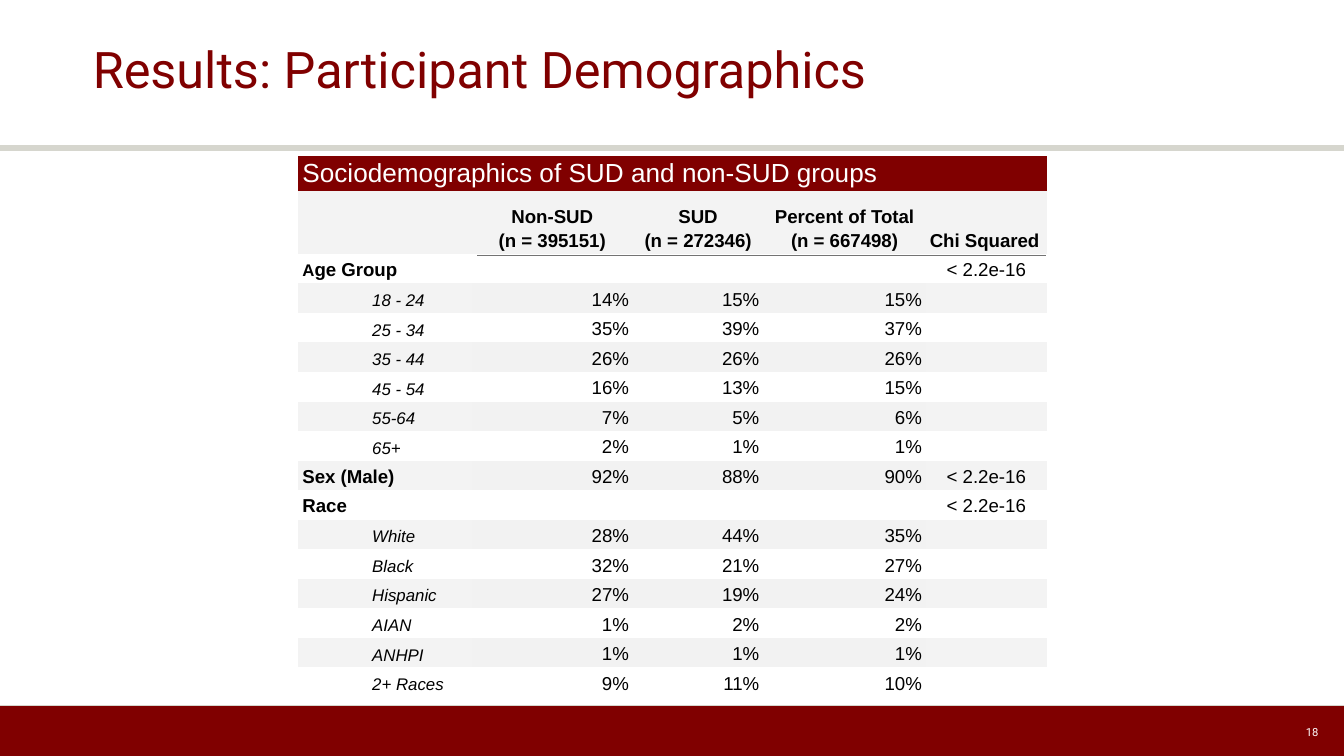
from lxml import etree
from pptx import Presentation
from pptx.dml.color import RGBColor
from pptx.enum.shapes import MSO_CONNECTOR, MSO_SHAPE
from pptx.enum.text import MSO_ANCHOR, PP_ALIGN
from pptx.oxml.ns import qn
from pptx.util import Inches, Pt

LEFT, CENTER, RIGHT = PP_ALIGN.LEFT, PP_ALIGN.CENTER, PP_ALIGN.RIGHT
MIDDLE, BOTTOM = MSO_ANCHOR.MIDDLE, MSO_ANCHOR.BOTTOM
RECTANGLE, STRAIGHT = MSO_SHAPE.RECTANGLE, MSO_CONNECTOR.STRAIGHT

MAROON, STONE, GRAY = "800000", "D6D6CE", "737373"
WHITE, BLACK, BAND, VALUE_BAND = "FFFFFF", "000000", "F3F3F3", "F2F2F2"
NO_STYLE = "{2D5ABB26-0587-4C30-8999-92F81FD0307C}"

COLUMN_WIDTHS = [0.52, 0.67, 0.09, 1.2, 0.97, 1.21, 0.9]
TITLE_HEIGHT, HEADER_HEIGHT, ROW_HEIGHT = 0.26, 0.47, 0.22
VALUE_COLUMNS, CHI_COLUMN = range(3, 6), 6
CHI = "< 2.2e-16"

HEADERS = ["Non-SUD\n(n = 395151)", "SUD\n(n = 272346)", "Percent of Total\n(n = 667498)", "Chi Squared"]
GROUPS = [
    ("Age Group", [], [
        ("18 - 24", [14, 15, 15]),
        ("25 - 34", [35, 39, 37]),
        ("35 - 44", [26, 26, 26]),
        ("45 - 54", [16, 13, 15]),
        ("55-64", [7, 5, 6]),
        ("65+", [2, 1, 1]),
    ]),
    ("Sex (Male)", [92, 88, 90], []),
    ("Race", [], [
        ("White", [28, 44, 35]),
        ("Black", [32, 21, 27]),
        ("Hispanic", [27, 19, 24]),
        ("AIAN", [1, 2, 2]),
        ("ANHPI", [1, 1, 1]),
        ("2+ Races", [9, 11, 10]),
    ]),
]


def rgb(color):
    """Turn a hex string into a colour."""
    return RGBColor.from_string(color)


def format_run(r, size, color, font="Arial", bold=False, italic=False):
    """Set the look of one run."""
    r.font.size, r.font.name = Pt(size), font
    r.font.bold, r.font.italic = bold, italic
    r.font.color.rgb = rgb(color)


def add_line(s, x1, x2, y, color, width):
    """Draw a horizontal rule."""
    line = s.shapes.add_connector(STRAIGHT, Inches(x1), Inches(y), Inches(x2), Inches(y))
    line.line.color.rgb = rgb(color)
    line.line.width = Pt(width)
    etree.SubElement(line._element.spPr, qn("a:effectLst"))


def add_bar(s, x, y, w, h, color):
    """Draw a plain filled rectangle."""
    bar = s.shapes.add_shape(RECTANGLE, Inches(x), Inches(y), Inches(w), Inches(h))
    bar.shadow.inherit = False
    bar.fill.solid()
    bar.fill.fore_color.rgb = rgb(color)
    bar.line.fill.background()


def add_text(s, x, y, w, h, text, size, color, align, inset, spacing):
    """Add a one-line Roboto text box."""
    tf = s.shapes.add_textbox(Inches(x), Inches(y), Inches(w), Inches(h)).text_frame
    tf.word_wrap = True
    tf.vertical_anchor = MIDDLE
    tf.margin_left = tf.margin_right = Inches(inset)
    tf.margin_top = tf.margin_bottom = Inches(0.04)
    tf.text = text
    p = tf.paragraphs[0]
    p.alignment, p.line_spacing = align, spacing
    format_run(p.runs[0], size, color, "Roboto")


def prepare_cell(cell, color):
    """Fill a cell, tighten its margins and keep its empty line small."""
    cell.fill.solid()
    cell.fill.fore_color.rgb = rgb(color)
    cell.vertical_anchor = BOTTOM
    cell.margin_left = cell.margin_right = Inches(0.03)
    cell.margin_top, cell.margin_bottom = 0, Inches(0.02)
    cell.text_frame.paragraphs[0]._p.get_or_add_endParaRPr().set("sz", "800")


def write_cell(cell, text, align=LEFT, size=10, color=BLACK, spacing=1.15, bold=False, italic=False):
    """Write the lines of a cell."""
    cell.text_frame.text = text
    for p in cell.text_frame.paragraphs:
        p.alignment, p.line_spacing = align, spacing
        for r in p.runs:
            format_run(r, size, color, bold=bold, italic=italic)


def shrink_initial(cell, size):
    """Give the first letter of a cell its own smaller run."""
    p = cell.text_frame.paragraphs[0]
    first, rest = p.runs[0], p.add_run()
    first.text, rest.text = first.text[0], first.text[1:]
    format_run(rest, 10, BLACK, bold=True)
    first.font.size = Pt(size)


def write_values(table, row, values):
    """Write the percentages of one row."""
    for column, value in zip(VALUE_COLUMNS, values):
        write_cell(table.cell(row, column), f"{value}%", RIGHT)


def row_color(row, column):
    """Give the banded fill for a cell."""
    if row == 0:
        return MAROON
    if row > 1 and row % 2 == 0:
        return WHITE
    return VALUE_BAND if row > 1 and column in VALUE_COLUMNS else BAND


def make_table(s, x, y):
    """Create the empty banded table."""
    body_rows = sum(1 + len(members) for _, _, members in GROUPS)
    heights = [TITLE_HEIGHT, HEADER_HEIGHT] + [ROW_HEIGHT] * body_rows
    table = s.shapes.add_table(len(heights), len(COLUMN_WIDTHS), Inches(x), Inches(y),
                               Inches(sum(COLUMN_WIDTHS)), Inches(sum(heights))).table
    table.first_row = table.horz_banding = False
    table._tbl.tblPr.find(qn("a:tableStyleId")).text = NO_STYLE
    for column, width in zip(table.columns, COLUMN_WIDTHS):
        column.width = Inches(width)
    for i, height in enumerate(heights):
        table.rows[i].height = Inches(height)
        for j in range(len(COLUMN_WIDTHS)):
            prepare_cell(table.cell(i, j), row_color(i, j))
    return table


def fill_table(table):
    """Write the title, headers and demographic groups."""
    table.cell(0, 0).merge(table.cell(0, CHI_COLUMN))
    write_cell(table.cell(0, 0), "Sociodemographics of SUD and non-SUD groups", size=14, color=WHITE, spacing=1)
    table.cell(1, 0).merge(table.cell(1, 1))
    for column, header in enumerate(HEADERS, VALUE_COLUMNS[0]):
        write_cell(table.cell(1, column), header, LEFT if column == CHI_COLUMN else CENTER, bold=True)
    row = 2
    for group, values, members in GROUPS:
        table.cell(row, 0).merge(table.cell(row, 2))
        write_cell(table.cell(row, 0), group, bold=True)
        write_values(table, row, values)
        write_cell(table.cell(row, CHI_COLUMN), CHI, CENTER)
        row += 1
        for member, shares in members:
            table.cell(row, 1).merge(table.cell(row, 2))
            write_cell(table.cell(row, 1), member, size=9, italic=True)
            write_values(table, row, shares)
            row += 1
    shrink_initial(table.cell(2, 0), 9)


def main():
    """Build the demographics slide."""
    prs = Presentation()
    prs.slide_width = Inches(10)
    prs.slide_height = prs.slide_width * 9 // 16
    s = prs.slides.add_slide(prs.slide_layouts[6])
    add_line(s, 0, 10, 1.1, STONE, 3)
    add_bar(s, 0, 5.25, 10, 0.38, MAROON)
    add_line(s, 0, 10, 5.25, STONE, 0.75)
    add_text(s, 0.69, 0, 8.62, 1.08, "Results: Participant Demographics", 27, MAROON, LEFT, 0, 0.9)
    add_text(s, 7.06, 5.3, 2.82, 0.3, "18", 6, WHITE, RIGHT, 0.07, 1)
    fill_table(make_table(s, 2.22, 1.16))
    add_line(s, 3.55, 7.78, 1.9, GRAY, 0.75)
    prs.save("out.pptx")


if __name__ == "__main__":
    main()
